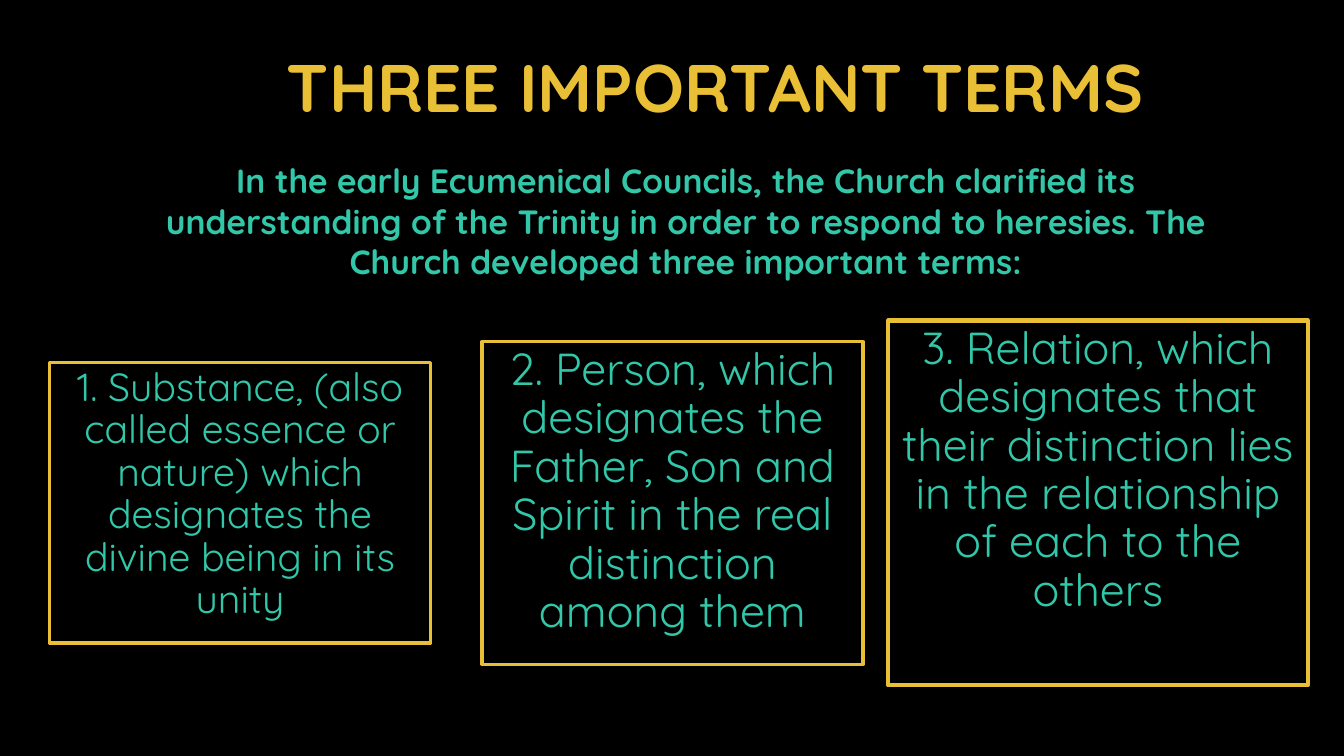
from dataclasses import dataclass
from pptx import Presentation
from pptx import util as u
from pptx.dml import color
from pptx.enum import shapes, text


@dataclass
class Theme:
    font: str = "Quicksand"
    back: str = "000000"
    gold: str = "E9BF35"
    teal: str = "32C7A9"
    head: int = 48
    lead: int = 24
    small: int = 28
    large: int = 32


theme = Theme()
rgb = color.RGBColor.from_string
deck = Presentation()
deck.slide_width, deck.slide_height = u.Inches(13.33), u.Inches(7.5)
col, row = deck.slide_width / 100, deck.slide_height / 100
slide = deck.slides.add_slide(deck.slide_layouts[5])
slide.background.fill.solid()
slide.background.fill.fore_color.rgb = rgb(theme.back)


def grid(left, top, width, height):
    return [int(n) for n in (left * col, top * row, width * col, height * row)]


def write(shape, words, size, hue=theme.teal, bold=False, space=0.9,
          align=text.PP_ALIGN.CENTER, anchor=text.MSO_ANCHOR.TOP):
    frame = shape.text_frame
    frame.word_wrap = True
    frame.auto_size = text.MSO_AUTO_SIZE.NONE
    frame.vertical_anchor = anchor
    para = frame.paragraphs[0]
    para.alignment, para.line_spacing = align, space
    run = para.add_run()
    run.text = words
    run.font.name, run.font.size, run.font.bold = theme.font, u.Pt(size), bold
    run.font.color.rgb = rgb(hue)


title = slide.shapes.title
title.left, title.top, title.width, title.height = grid(16.73, 12.93, 70.67, 7.6)
write(title, "THREE IMPORTANT TERMS", theme.head, hue=theme.gold, bold=True,
      align=text.PP_ALIGN.RIGHT, anchor=text.MSO_ANCHOR.BOTTOM)
title.text_frame.margin_right = u.Inches(0.31)
title.text_frame.margin_bottom = u.Inches(0.28)

terms = [
    (3.68, 28.36, 2.25, theme.small,
     "1. Substance, (also called essence or nature) which designates the divine being in its unity"),
    (35.86, 28.36, 2.25, theme.large,
     "2. Person, which designates the Father, Son and Spirit in the real distinction among them"),
    (66.09, 31.21, 3, theme.large,
     "3. Relation, which designates that their distinction lies in the relationship of each to the others"),
]
middle, first, growth = 66.53, 37.07, 5.6
for step, (left, width, edge, size, words) in enumerate(terms):
    tall = first + step * growth
    box = slide.shapes.add_shape(shapes.MSO_SHAPE.RECTANGLE,
                                 *grid(left, middle - tall / 2, width, tall))
    box.shadow.inherit = False
    box.fill.background()
    box.line.color.rgb = rgb(theme.gold)
    box.line.width = u.Pt(edge)
    write(box, words, size)

lead = slide.shapes.add_textbox(*grid(10.73, 20.53, 80.57, 17.47))
write(lead, "In the early Ecumenical Councils, the Church clarified its understanding of the Trinity "
      "in order to respond to heresies. The Church developed three important terms:",
      theme.lead, bold=True, space=1.0)

deck.save("out.pptx")
